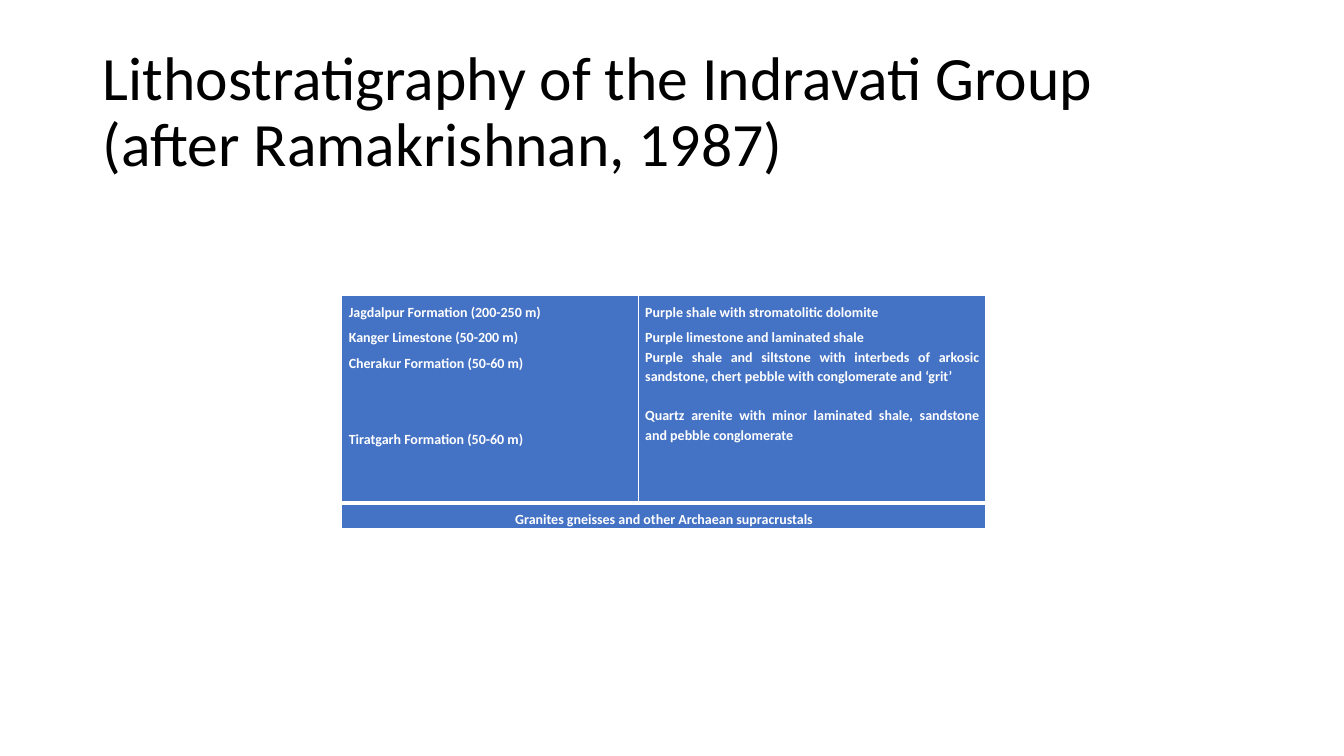
"""Build the slide on the lithostratigraphy of the Indravati Group."""
from lxml.etree import SubElement
from pptx import Presentation
from pptx.dml.color import RGBColor
from pptx.enum.text import MSO_ANCHOR, PP_ALIGN
from pptx.oxml.ns import qn
from pptx.util import Inches, Pt


def style(paragraph, size, color, spacing, align, bold=False):
    paragraph.line_spacing = spacing
    paragraph.alignment = align
    paragraph.font.name = "Calibri"
    paragraph.font.size = Pt(size)
    paragraph.font.bold = bold
    paragraph.font.color.rgb = RGBColor.from_string(color)


def add_border(cell, side, width):
    line = SubElement(cell._tc.get_or_add_tcPr(), qn(f"a:ln{side}"), w=str(Pt(width)))
    fill = SubElement(line, qn("a:solidFill"))
    SubElement(fill, qn("a:srgbClr"), val="FFFFFF")


prs = Presentation()
prs.slide_width = Inches(13.33)
prs.slide_height = Inches(7.5)
slide = prs.slides.add_slide(prs.slide_layouts[6])

title = slide.shapes.add_textbox(Inches(0.92), Inches(0.4), Inches(11.5), Inches(1.45)).text_frame
title.word_wrap = True
title.vertical_anchor = MSO_ANCHOR.MIDDLE
title.text = "Lithostratigraphy of the Indravati Group (after Ramakrishnan, 1987)"
style(title.paragraphs[0], 44, "000000", 0.9, PP_ALIGN.LEFT)

strata = slide.shapes.add_table(2, 2, Inches(3.39), Inches(2.93), Inches(6.39), Inches(2.28)).table
for column, width in zip(strata.columns, (2.94, 3.45)):
    column.width = Inches(width)
for row, height in zip(strata.rows, (2.06, 0.22)):
    row.height = Inches(height)
strata.cell(1, 0).merge(strata.cell(1, 1))

for row_index, row in enumerate(strata.rows):
    for cell in row.cells:
        cell.margin_left = cell.margin_right = Inches(0.07)
        cell.margin_top = cell.margin_bottom = 0
        top, bottom = ((1, 3), (3, 1))[row_index]
        for side, width in (("L", 1), ("R", 1), ("T", top), ("B", bottom)):
            add_border(cell, side, width)
        cell.fill.solid()
        cell.fill.fore_color.rgb = RGBColor.from_string("4472C4")

formations = [
    ("Jagdalpur Formation (200-250 m)", 1.5, 0),
    ("Kanger Limestone (50-200 m)", 1.5, 0),
    ("Cherakur Formation (50-60 m)", 1.5, 0),
    ("Tiratgarh Formation (50-60 m)", 1.5, 36.5),
]
lithologies = [
    ("Purple shale with stromatolitic dolomite", 1.5, 0),
    ("Purple limestone and laminated shale", 1.5, 0),
    ("Purple shale and siltstone with interbeds of arkosic sandstone, "
     "chert pebble with conglomerate and ‘grit’", 1.15, 0),
    ("Quartz arenite with minor laminated shale, sandstone and pebble conglomerate", 1.15, 14),
]
basement = [("Granites gneisses and other Archaean supracrustals", 1.5, 0)]

for cell, entries, align in (
    (strata.cell(0, 0), formations, PP_ALIGN.JUSTIFY),
    (strata.cell(0, 1), lithologies, PP_ALIGN.JUSTIFY),
    (strata.cell(1, 0), basement, PP_ALIGN.CENTER),
):
    cell.text = "\n".join(text for text, _, _ in entries)
    for paragraph, (_, spacing, gap) in zip(cell.text_frame.paragraphs, entries):
        style(paragraph, 10, "FFFFFF", spacing, align, bold=True)
        if gap:
            paragraph.space_before = Pt(gap)

prs.save("out.pptx")
